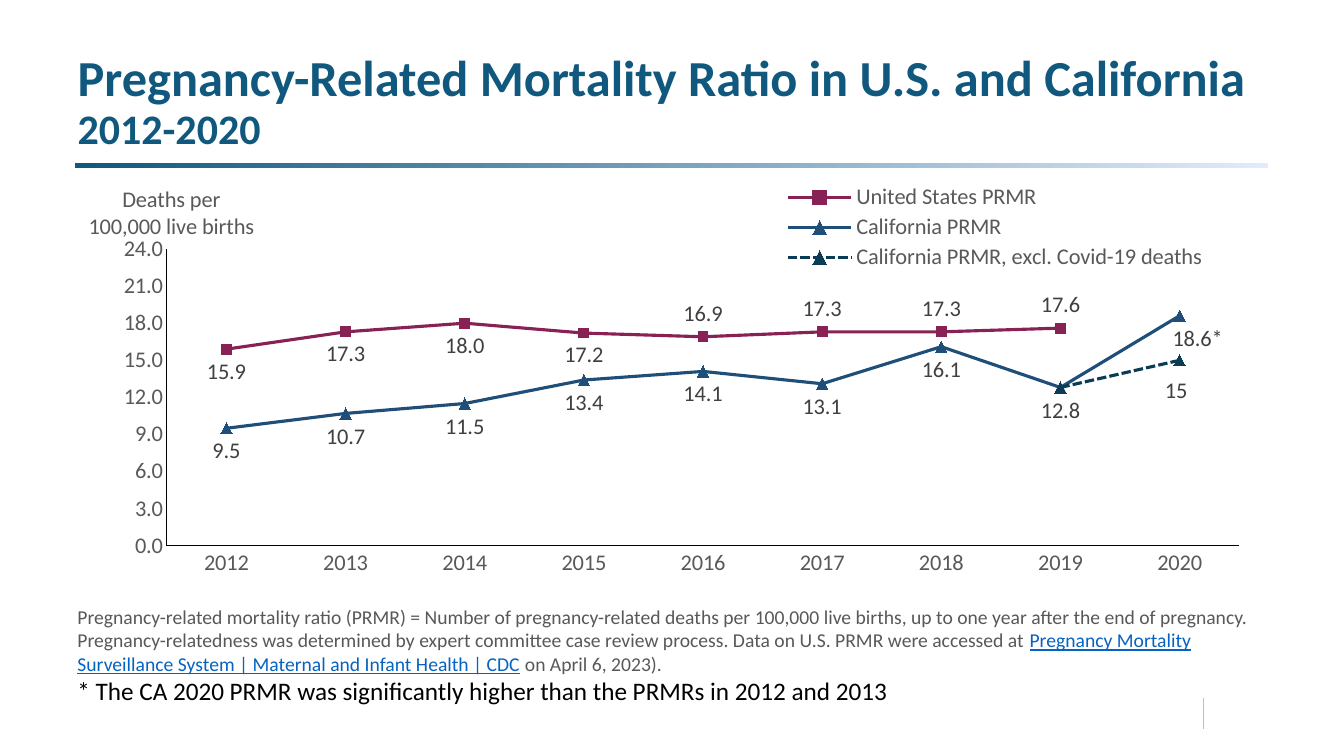
from lxml import etree
from pptx import Presentation
from pptx.chart.data import CategoryChartData
from pptx.dml.color import RGBColor
from pptx.enum.chart import XL_LABEL_POSITION as LabelPosition
from pptx.enum.chart import XL_CHART_TYPE, XL_LEGEND_POSITION, XL_MARKER_STYLE, XL_TICK_MARK
from pptx.enum.dml import MSO_LINE
from pptx.enum.shapes import MSO_CONNECTOR, MSO_SHAPE
from pptx.enum.text import MSO_ANCHOR, MSO_AUTO_SIZE, PP_ALIGN
from pptx.oxml.ns import qn
from pptx.util import Inches, Pt


def style_font(font, size, color, bold=False):
    font.name = "Calibri"
    font.size = Pt(size)
    font.bold = bold
    font.color.rgb = RGBColor.from_string(color)


def set_layout(parent, index, **values):
    """Place a chart part by hand, in fractions of the chart."""
    for old_layout in parent.findall(qn("c:layout")):
        parent.remove(old_layout)
    layout = etree.Element(qn("c:layout"))
    manual = etree.SubElement(layout, qn("c:manualLayout"))
    for name, value in values.items():
        etree.SubElement(manual, qn(f"c:{name}")).set("val", str(value))
    parent.insert(index, layout)


presentation = Presentation()
presentation.slide_width = Inches(13.33)
presentation.slide_height = Inches(7.5)
slide = presentation.slides.add_slide(presentation.slide_layouts[5])

# Footer divider
divider = slide.shapes.add_connector(
    MSO_CONNECTOR.STRAIGHT, Inches(11.94), Inches(6.92), Inches(11.94), Inches(7.23))
divider.line.color.rgb = RGBColor.from_string("BFBFBF")
divider.line.width = Pt(0.5)
etree.SubElement(divider._element.spPr, qn("a:effectLst"))

# Gradient rule under the title
rule = slide.shapes.add_shape(
    MSO_SHAPE.RECTANGLE, Inches(0.74), Inches(1.62), Inches(11.84), Inches(0.05))
rule.shadow.inherit = False
rule.line.fill.background()
rule.fill.gradient()
rule.fill.gradient_angle = 0
for stop, color in zip(rule.fill.gradient_stops, ("10587D", "E1EBFB")):
    stop.color.rgb = RGBColor.from_string(color)

# Title
title = slide.shapes.title
title.left, title.top = Inches(0.67), Inches(0.36)
title.width, title.height = Inches(12), Inches(1.21)
title_frame = title.text_frame
title_frame.text = "Pregnancy-Related Mortality Ratio in U.S. and California\v2012-2020"
title_frame.auto_size = MSO_AUTO_SIZE.NONE
title_frame.vertical_anchor = MSO_ANCHOR.BOTTOM
title_paragraph = title_frame.paragraphs[0]
title_paragraph.alignment = PP_ALIGN.LEFT
title_paragraph.line_spacing = 0.9
for run, size in zip(title_paragraph.runs, (36, 30)):
    style_font(run.font, size, "10587D", bold=True)

# Notes below the chart
notes = slide.shapes.add_textbox(Inches(0.67), Inches(5.95), Inches(12), Inches(1.11))
notes_frame = notes.text_frame
notes_frame.word_wrap = True
definition = notes_frame.paragraphs[0]
for text, color, underline in (
    ("Pregnancy-related mortality ratio (PRMR) = Number of pregnancy-related deaths per "
     "100,000 live births, up to one year after the end of pregnancy. Pregnancy-relatedness "
     "was determined by expert committee case review process. Data on U.S. PRMR were "
     "accessed at ", "585858", False),
    ("Pregnancy Mortality Surveillance System | Maternal and Infant Health | CDC",
     "0563C1", True),
    (" on April 6, 2023).", "585858", False),
):
    run = definition.add_run()
    run.text = text
    style_font(run.font, 14, color)
    run.font.underline = underline
significance = notes_frame.add_paragraph()
significance.text = "* The CA 2020 PRMR was significantly higher than the PRMRs in 2012 and 2013"
style_font(significance.runs[0].font, 18, "000000")

# Chart data
chart_data = CategoryChartData()
chart_data.categories = [str(year) for year in range(2012, 2021)]
chart_data.add_series(
    "United States PRMR", [15.9, 17.3, 18, 17.2, 16.9, 17.3, 17.3, 17.6, None], "0.0")
chart_data.add_series(
    "California PRMR", [9.5, 10.7, 11.5, 13.4, 14.1, 13.1, 16.1, 12.8, 18.6], "0.0")
chart_data.add_series(
    "California PRMR, excl. Covid-19 deaths", [None] * 7 + [12.8, 15], "General")
chart = slide.shapes.add_chart(
    XL_CHART_TYPE.LINE_MARKERS, Inches(0.67), Inches(1.67), Inches(11.87), Inches(4.19),
    chart_data).chart
style_font(chart.font, 16, "000000")
chart.has_title = False
plot = chart.plots[0]
plot.vary_by_categories = False
set_layout(chart._chartSpace.chart.plotArea, 0, layoutTarget="inner", xMode="edge",
           yMode="edge", x=0.083, y=0.191, w=0.896, h=0.703)

# Legend
chart.has_legend = True
legend = chart.legend
legend.position = XL_LEGEND_POSITION.TOP
legend.include_in_layout = False
style_font(legend.font, 16, "595959")
set_layout(legend._element, 1, xMode="edge", yMode="edge", x=0.59, y=0.03, w=0.37, h=0.22)

# Axes
value_axis = chart.value_axis
value_axis.minimum_scale, value_axis.maximum_scale = 0, 24
value_axis.major_unit = 3
value_axis.has_major_gridlines = False
value_axis.tick_labels.number_format = "0.0"
value_axis.tick_labels.number_format_is_linked = False
for axis in (chart.category_axis, value_axis):
    axis.major_tick_mark = XL_TICK_MARK.NONE
    axis.minor_tick_mark = XL_TICK_MARK.NONE
    axis.format.line.color.rgb = RGBColor.from_string("000000")
    axis.format.line.width = Pt(0.75)
    style_font(axis.tick_labels.font, 16, "595959")

# Value axis title, set level above the axis
axis_title = value_axis.axis_title
axis_title.text_frame.text = "Deaths per\n100,000 live births"
axis_title.text_frame._txBody.bodyPr.set("rot", "0")
for paragraph in axis_title.text_frame.paragraphs:
    paragraph.alignment = PP_ALIGN.LEFT
    style_font(paragraph.runs[0].font, 16, "595959")
set_layout(axis_title._element, 1, xMode="edge", yMode="edge", x=0.015, y=0.03)

# Series lines and markers
square, triangle = XL_MARKER_STYLE.SQUARE, XL_MARKER_STYLE.TRIANGLE
series_styles = (
    ("882255", "882255", square, 7),
    ("1F4E79", "1F4E79", triangle, 8),
    ("0B3C55", "0B3C55", triangle, 8),
)
for series, (line_color, marker_color, marker_style, marker_size) in zip(
        plot.series, series_styles):
    series.smooth = False
    series.format.line.color.rgb = RGBColor.from_string(line_color)
    series.format.line.width = Pt(2.25)
    series.marker.style = marker_style
    series.marker.size = marker_size
    series.marker.format.fill.solid()
    series.marker.format.fill.fore_color.rgb = RGBColor.from_string(marker_color)
    series.marker.format.line.color.rgb = RGBColor.from_string(marker_color)
national, california, without_covid = plot.series
without_covid.format.line.dash_style = MSO_LINE.SQUARE_DOT

# Data labels
for series, position in ((national, LabelPosition.ABOVE), (california, LabelPosition.BELOW)):
    labels = series.data_labels
    labels.show_value = True
    labels.position = position
    labels.number_format = "0.0"
    labels.number_format_is_linked = False
    style_font(labels.font, 16, "404040")
for year_index in range(4):
    label = national.points[year_index].data_label
    style_font(label.font, 16, "404040")
    label.position = LabelPosition.BELOW

# Labels of 2020, nudged away from their points
california_2020 = california.points[8].data_label
california_2020.text_frame.text = "18.6*"
style_font(california_2020.text_frame.paragraphs[0].runs[0].font, 16, "404040")
without_covid_2020 = without_covid.points[8].data_label
style_font(without_covid_2020.font, 16, "404040")
for label, x, y in ((california_2020, 0.015, 0), (without_covid_2020, -0.003, 0.017)):
    label.position = LabelPosition.BELOW
    set_layout(label._dLbl, 1, x=x, y=y)

presentation.save("out.pptx")
